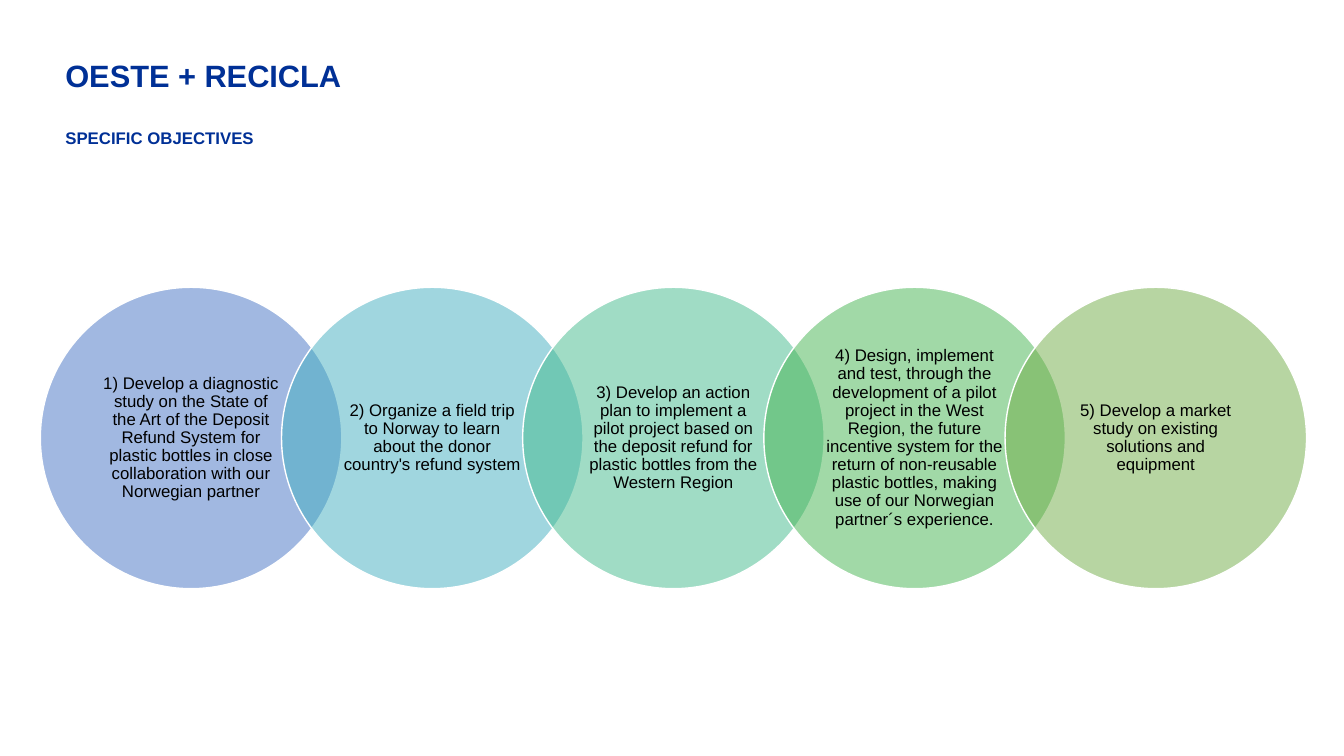
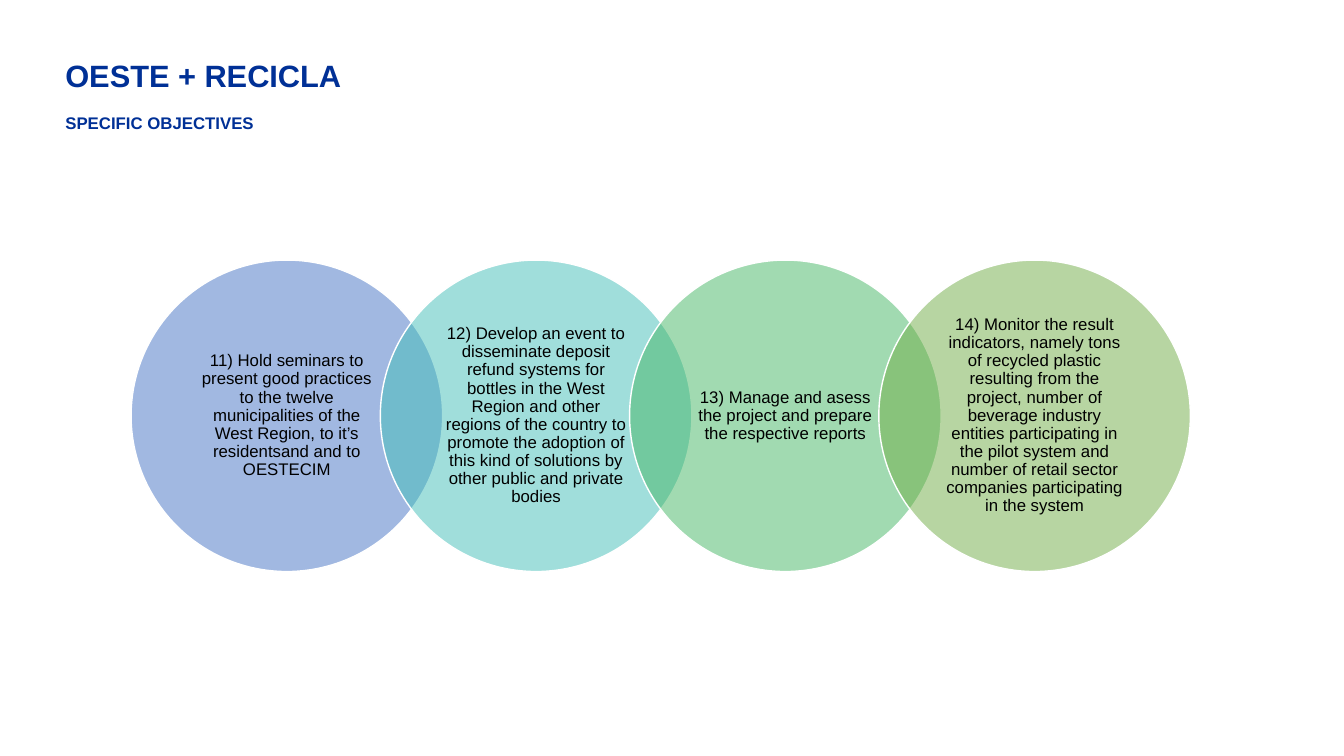
"""Build two slides of project objectives shown as chains of overlapping circles."""
import pptx
import pptx.dml.color
import pptx.enum.shapes
import pptx.enum.text
import pptx.oxml
import pptx.oxml.ns
import pptx.util

Inches = pptx.util.Inches
RGBColor = pptx.dml.color.RGBColor
PP_ALIGN = pptx.enum.text.PP_ALIGN
MSO_ANCHOR = pptx.enum.text.MSO_ANCHOR

FONT = "Arial"
NAVY = RGBColor(0x00, 0x30, 0x96)
BLACK = RGBColor(0x00, 0x00, 0x00)
WHITE = RGBColor(0xFF, 0xFF, 0xFF)
BLUE = RGBColor(0x44, 0x72, 0xC4)
CYAN = RGBColor(0x43, 0xAF, 0xC0)
TURQUOISE = RGBColor(0x43, 0xBE, 0xB9)
TEAL = RGBColor(0x43, 0xBB, 0x8D)
EMERALD = RGBColor(0x45, 0xB6, 0x64)
GREEN = RGBColor(0x45, 0xB4, 0x51)
OLIVE = RGBColor(0x70, 0xAD, 0x47)

OPACITY = 50
PITCH_RATIO = 0.8

FIRST_OBJECTIVES = [
    (BLUE, "1) Develop a diagnostic study on the State of the Art of the Deposit Refund System "
           "for plastic bottles in close collaboration with our Norwegian partner"),
    (CYAN, "2) Organize a field trip to Norway to learn about the donor country's refund system"),
    (TEAL, "3) Develop an action plan to implement a pilot project based on the deposit refund "
           "for plastic bottles from the Western Region"),
    (GREEN, "4) Design, implement and test, through the development of a pilot project in the "
            "West Region, the future incentive system for the return of non-reusable plastic "
            "bottles, making use of our Norwegian partner´s experience."),
    (OLIVE, "5) Develop a market study on existing solutions and equipment"),
]
LAST_OBJECTIVES = [
    (BLUE, "11) Hold seminars to present good practices to the twelve municipalities of the "
           "West Region, to it’s residentsand and to OESTECIM"),
    (TURQUOISE, "12) Develop an event to disseminate deposit refund systems for bottles in the "
                "West Region and other regions of the country to promote the adoption of this "
                "kind of solutions by other public and private bodies"),
    (EMERALD, "13) Manage and asess the project and prepare the respective reports"),
    (OLIVE, "14) Monitor the result indicators, namely tons of recycled plastic resulting from "
            "the project, number of beverage industry entities participating in the pilot "
            "system and number of retail sector companies participating in the system"),
]


def write(frame, text, size=12, color=BLACK, bold=False, align=PP_ALIGN.LEFT,
          anchor=MSO_ANCHOR.TOP, spacing=1.0, side=0.1, edge=0.05):
    """Put one formatted paragraph into a text frame."""
    frame.word_wrap = True
    frame.vertical_anchor = anchor
    frame.margin_left = frame.margin_right = Inches(side)
    frame.margin_top = frame.margin_bottom = Inches(edge)
    paragraph = frame.paragraphs[0]
    paragraph.alignment = align
    paragraph.line_spacing = spacing
    run = paragraph.add_run()
    run.text = text
    run.font.name = FONT
    run.font.size = pptx.util.Pt(size)
    run.font.bold = bold
    run.font.color.rgb = color


def add_heading(slide, text, top, height, size):
    """Add a bold navy heading at the left margin."""
    heading = slide.shapes.add_textbox(Inches(0.55), Inches(top), Inches(7), Inches(height))
    write(heading.text_frame, text, size=size, color=NAVY, bold=True)


def add_objective(slide, text, color, left, top, diameter, side):
    """Add a translucent circle holding one objective."""
    circle = slide.shapes.add_shape(
        pptx.enum.shapes.MSO_SHAPE.OVAL,
        Inches(left), Inches(top), Inches(diameter), Inches(diameter))
    circle.shadow.inherit = False
    circle.fill.solid()
    circle.fill.fore_color.rgb = color
    tint = circle.fill._xPr.find(".//" + pptx.oxml.ns.qn("a:srgbClr"))
    alpha = pptx.oxml.parse_xml(
        f'<a:alpha {pptx.oxml.ns.nsdecls("a")} val="{OPACITY * 1000}"/>')
    tint.append(alpha)
    circle.line.color.rgb = WHITE
    circle.line.width = pptx.util.Pt(1)
    write(circle.text_frame, text, align=PP_ALIGN.CENTER, anchor=MSO_ANCHOR.MIDDLE,
          spacing=0.9, side=side, edge=0.02)


def add_objectives_slide(deck, objectives, subtitle_top, left, top, diameter, side):
    """Add a titled slide with a chain of objective circles."""
    slide = deck.slides.add_slide(deck.slide_layouts[6])
    add_heading(slide, "OESTE + RECICLA", 0.51, 0.47, 22)
    add_heading(slide, "SPECIFIC OBJECTIVES", subtitle_top, 0.3, 12)
    for index, (color, text) in enumerate(objectives):
        add_objective(slide, text, color, left + index * PITCH_RATIO * diameter,
                      top, diameter, side)


def main():
    """Build and save the deck."""
    deck = pptx.Presentation()
    deck.slide_width, deck.slide_height = Inches(13.33), Inches(7.5)
    add_objectives_slide(deck, FIRST_OBJECTIVES, subtitle_top=1.22,
                         left=0.4, top=2.85, diameter=2.99, side=0.16)
    add_objectives_slide(deck, LAST_OBJECTIVES, subtitle_top=1.07,
                         left=1.3, top=2.58, diameter=3.09, side=0.17)
    deck.save("out.pptx")


if __name__ == "__main__":
    main()
